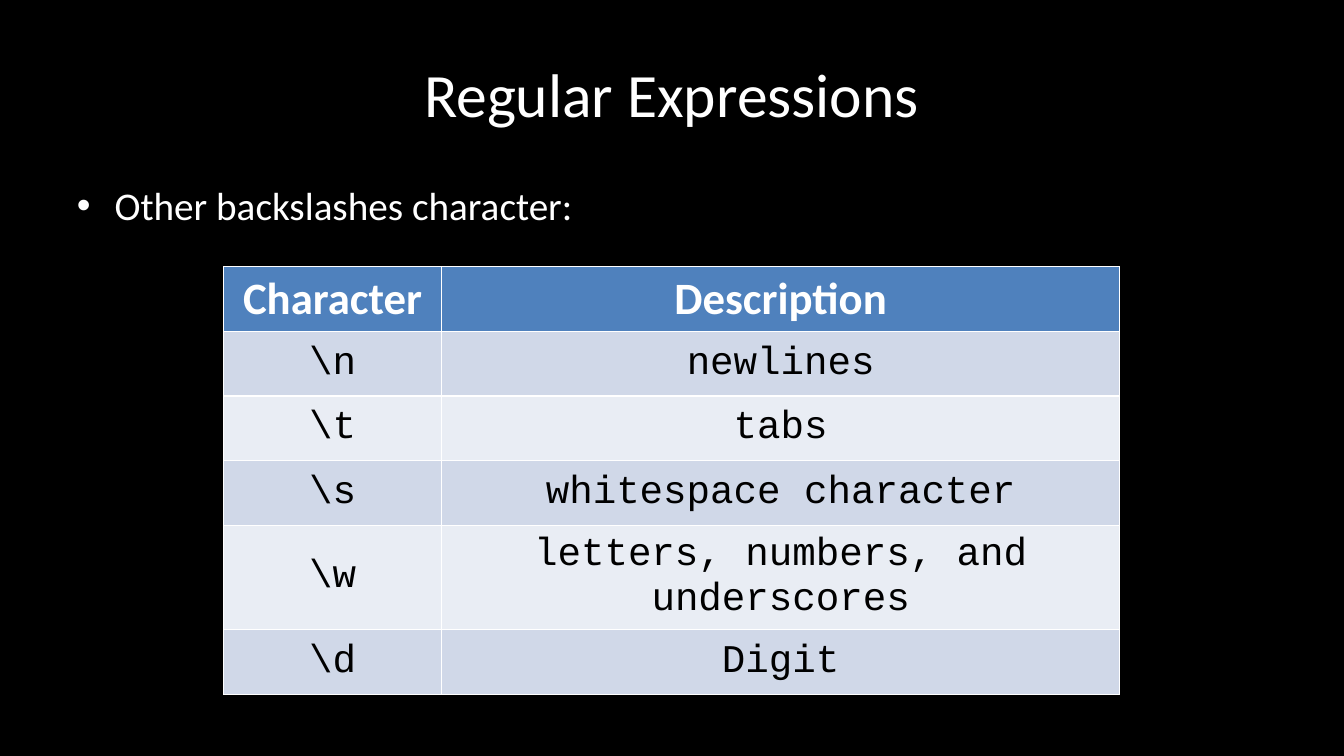
from lxml.etree import SubElement
from pptx import Presentation
from pptx.dml.color import RGBColor
from pptx.enum.text import MSO_ANCHOR as Anchor, PP_ALIGN as Align
from pptx.oxml.ns import qn
from pptx.util import Cm, Pt

WHITE = RGBColor(0xFF, 0xFF, 0xFF)
BLACK = RGBColor(0x00, 0x00, 0x00)
BLUE = RGBColor(0x4F, 0x81, 0xBD)
DARK = RGBColor(0xD0, 0xD8, 0xE8)
LIGHT = RGBColor(0xE9, 0xED, 0xF4)

ROWS = [
    ("Character", "Description"),
    (r"\n", "newlines"),
    (r"\t", "tabs"),
    (r"\s", "whitespace character"),
    (r"\w", "letters, numbers, and underscores"),
    (r"\d", "Digit"),
]


def style(para, size, color, face="Calibri", bold=False):
    font = para.font
    font.name, font.size, font.bold = face, Pt(size), bold
    font.color.rgb = color


def add_text(text, top, height, size, anchor):
    """Add a full-width white text box and return its paragraph."""
    frame = slide.shapes.add_textbox(Cm(1.69), top, Cm(30.48), height).text_frame
    frame.word_wrap = True
    frame.vertical_anchor = anchor
    para = frame.paragraphs[0]
    para.text = text
    style(para, size, WHITE)
    return para


deck = Presentation()
deck.slide_width, deck.slide_height = Cm(33.87), Cm(19.05)
slide = deck.slides.add_slide(deck.slide_layouts[6])
back = slide.background.fill
back.solid()
back.fore_color.rgb = BLACK

# Title and bullet
title = add_text("Regular Expressions", Cm(0.76), Cm(3.18), 44, Anchor.MIDDLE)
title.alignment = Align.CENTER

point = add_text("Other backslashes character:", Cm(4.45), Cm(12.57), 28, Anchor.TOP)
point.space_before = Pt(5.6)
props = point._p.get_or_add_pPr()
props.set("marL", str(Cm(0.95)))
props.set("indent", str(Cm(-0.95)))
SubElement(props, qn("a:buFont"), typeface="Arial")
SubElement(props, qn("a:buChar"), char="•")

# Table: the default style draws the white borders
table = slide.shapes.add_table(
    len(ROWS), 2, Cm(5.64), Cm(6.72), Cm(22.58), Cm(9.78)
).table
table.columns[0].width, table.columns[1].width = Cm(5.49), Cm(17.09)

for r, row in enumerate(ROWS):
    table.rows[r].height = Cm(1.63)
    for c, text in enumerate(row):
        cell = table.cell(r, c)
        cell.text = text
        cell.vertical_anchor = Anchor.MIDDLE
        cell.fill.solid()
        para = cell.text_frame.paragraphs[0]
        para.alignment = Align.CENTER
        if r == 0:
            cell.fill.fore_color.rgb = BLUE
            style(para, 32, WHITE, bold=True)
        else:
            cell.fill.fore_color.rgb = DARK if r % 2 else LIGHT
            style(para, 28, BLACK, "Courier New")

deck.save("out.pptx")
